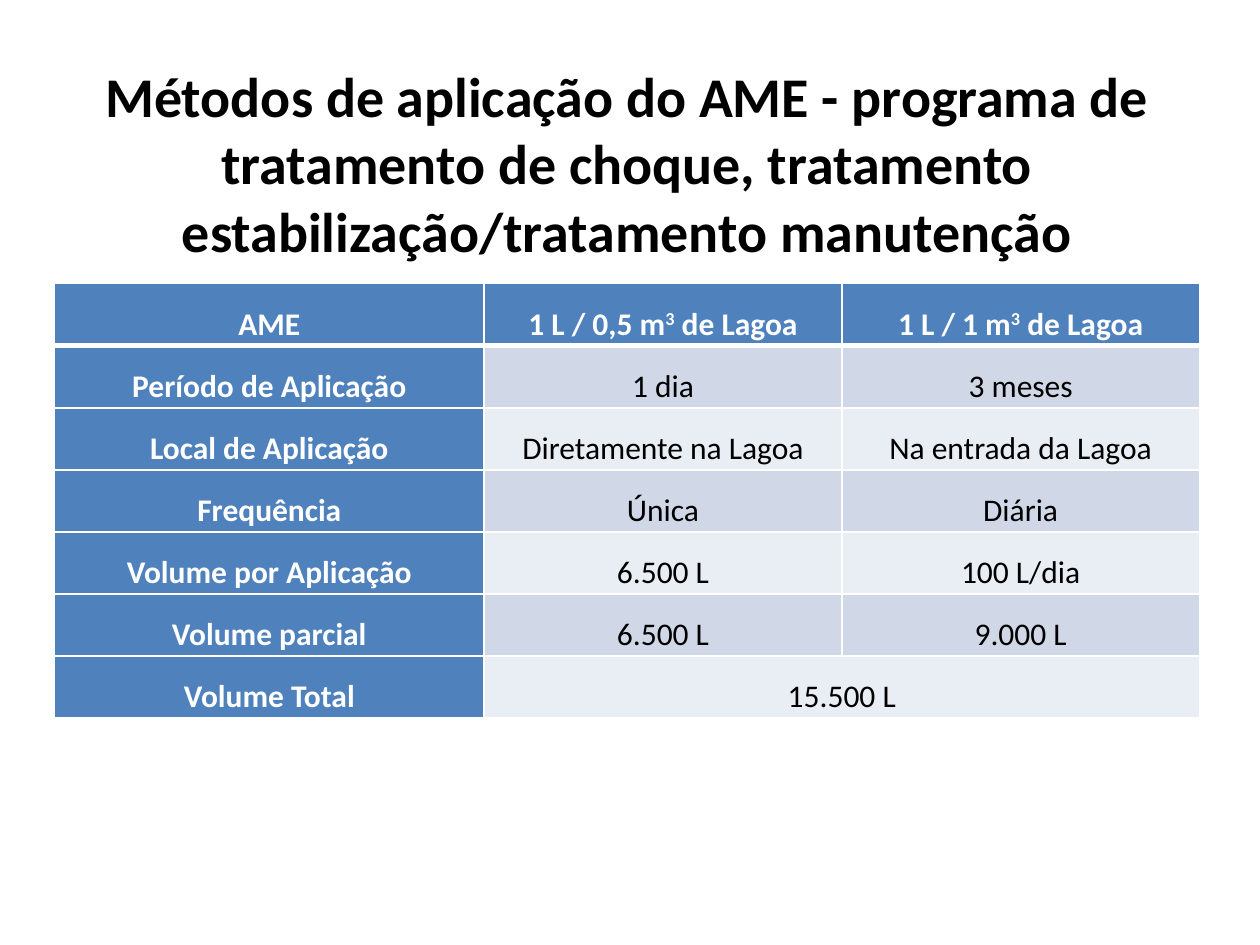
from typing import NamedTuple

from lxml.etree import SubElement
from pptx import Presentation
from pptx.dml.color import RGBColor as Rgb
from pptx.enum.text import MSO_ANCHOR as Anchor, PP_ALIGN as Align
from pptx.oxml.ns import qn
from pptx.util import Cm, Pt

COLOURS = {
    "black": "000000",
    "white": "FFFFFF",
    "header": "4F81BD",
    "dark_band": "D0D8E8",
    "light_band": "E9EDF4",
}
FONT = "Calibri"
LEFT, WIDTH = Cm(1.1), Cm(23.09)
COLUMN_WIDTHS = (Cm(8.66), Cm(7.21), Cm(7.21))
ROW_HEIGHT = Cm(1.25)
SUPERSCRIPT = "3"


class Row(NamedTuple):
    label: str
    shock: str
    upkeep: str = ""  # empty: the shock cell spans both columns


# A caret marks the superscript exponent
ROWS = (
    Row("AME", "1 L / 0,5 m^ de Lagoa", "1 L / 1 m^ de Lagoa"),
    Row("Período de Aplicação", "1 dia", "3 meses"),
    Row("Local de Aplicação", "Diretamente na Lagoa", "Na entrada da Lagoa"),
    Row("Frequência", "Única", "Diária"),
    Row("Volume por Aplicação", "6.500 L", "100 L/dia"),
    Row("Volume parcial", "6.500 L", "9.000 L"),
    Row("Volume Total", "15.500 L"),
)


def style_paragraph(para, size: int, colour: str, bold: bool) -> None:
    para.alignment = Align.CENTER
    para.font.name = FONT
    para.font.size = Pt(size)
    para.font.bold = bold
    para.font.color.rgb = Rgb.from_string(COLOURS[colour])


def add_spans(para, text: str) -> None:
    before, caret, after = text.partition("^")
    para.add_run().text = before
    if caret:
        exponent = para.add_run()
        exponent.text = SUPERSCRIPT
        exponent.font._element.set("baseline", "30000")
        para.add_run().text = after


def set_borders(cell, bottom: float) -> None:
    properties = cell._tc.get_or_add_tcPr()
    for tag, width in (("lnL", 1), ("lnR", 1), ("lnT", 1), ("lnB", bottom)):
        line = SubElement(properties, qn(f"a:{tag}"), w=str(Pt(width)))
        fill = SubElement(line, qn("a:solidFill"))
        SubElement(fill, qn("a:srgbClr"), val=COLOURS["white"])


def fill_cell(cell, text: str, row: int, column: int) -> None:
    heading = row == 0 or column == 0
    band = "dark_band" if row % 2 else "light_band"
    set_borders(cell, bottom=3 if row == 0 else 1)
    cell.fill.solid()
    cell.fill.fore_color.rgb = Rgb.from_string(COLOURS["header" if heading else band])
    cell.vertical_anchor = Anchor.MIDDLE
    cell.margin_left = cell.margin_right = Cm(0.18)
    cell.margin_top = cell.margin_bottom = 0
    para = cell.text_frame.paragraphs[0]
    para.line_spacing = 1.5
    add_spans(para, text)
    style_paragraph(para, 18, "white" if heading else "black", heading)


def add_title(page) -> None:
    box = page.shapes.add_textbox(LEFT, Cm(1.12), WIDTH, Cm(3.4))
    frame = box.text_frame
    frame.word_wrap = True
    frame.vertical_anchor = Anchor.TOP
    para = frame.paragraphs[0]
    para.add_run().text = (
        "Métodos de aplicação do AME - programa de tratamento de choque, "
        "tratamento estabilização/tratamento manutenção"
    )
    style_paragraph(para, 32, "black", True)


def add_method_table(page) -> None:
    table = page.shapes.add_table(
        len(ROWS), len(COLUMN_WIDTHS), LEFT, Cm(5.72), WIDTH, ROW_HEIGHT * len(ROWS)
    ).table
    table.first_row = table.horz_banding = False
    for column, width in zip(table.columns, COLUMN_WIDTHS):
        column.width = width
    for r, row in enumerate(ROWS):
        table.rows[r].height = ROW_HEIGHT
        for c, text in enumerate(row):
            fill_cell(table.cell(r, c), text, r, c)
        if not row.upkeep:
            table.cell(r, 1).merge(table.cell(r, 2))


def main() -> None:
    deck = Presentation()
    deck.slide_width, deck.slide_height = Cm(25.4), Cm(19.05)
    page = deck.slides.add_slide(deck.slide_layouts[6])
    add_title(page)
    add_method_table(page)
    deck.save("out.pptx")


if __name__ == "__main__":
    main()
